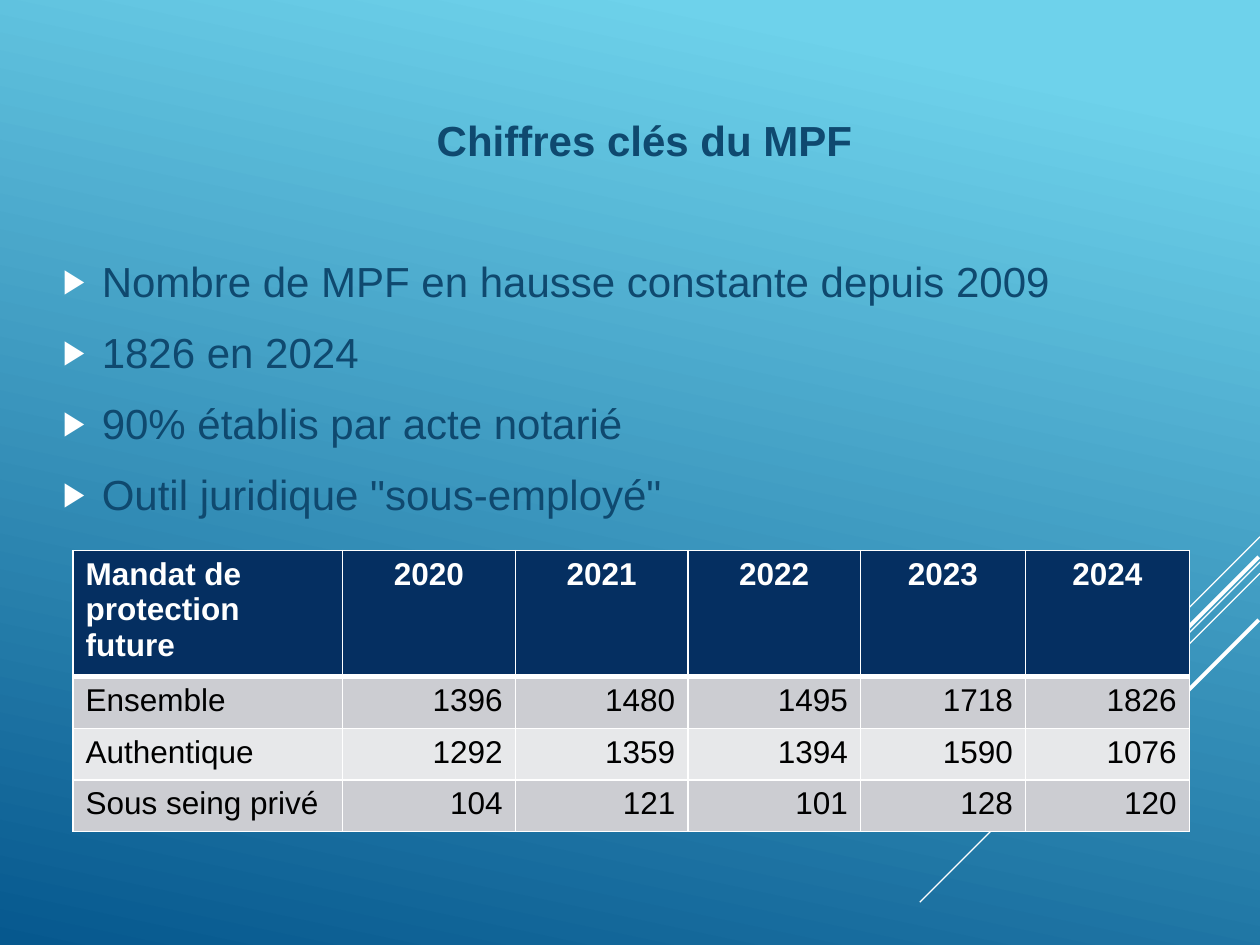
from dataclasses import dataclass

from lxml.etree import SubElement
from pptx import Presentation
from pptx.dml.color import RGBColor
from pptx.enum.shapes import MSO_CONNECTOR
from pptx.enum.text import MSO_ANCHOR, PP_ALIGN
from pptx.oxml import parse_xml
from pptx.oxml.ns import nsdecls, qn
from pptx.util import Inches, Pt

TITLE = "Chiffres clés du MPF"
KEY_POINTS = [
    "Nombre de MPF en hausse constante depuis 2009",
    "1826 en 2024",
    "90% établis par acte notarié",
    'Outil juridique "sous-employé"',
]
MANDATES = [
    ("Mandat de protection future", "2020", "2021", "2022", "2023", "2024"),
    ("Ensemble", "1396", "1480", "1495", "1718", "1826"),
    ("Authentique", "1292", "1359", "1394", "1590", "1076"),
    ("Sous seing privé", "104", "121", "101", "128", "120"),
]
COLUMN_WIDTHS = [2.14, 1.37, 1.37, 1.37, 1.31, 1.3]
ROW_HEIGHTS = [0.94, 0.41, 0.41, 0.41]
DIAGONALS = [
    (10, 4.26, 0.83, 0.75),
    (10, 4.46, 2.7, 0.75),
    (10, 4.55, 1.72, 0.75),
    (9.99, 4.42, 1.57, 2.25),
    (9.99, 4.92, 1.14, 2.25),
]


@dataclass(frozen=True)
class Theme:
    font: str = "Arial"
    sky: str = "6ED2EB"
    deep: str = "06588E"
    ink: str = "0F496F"
    white: str = "FFFFFF"
    black: str = "000000"
    header: str = "052F61"
    bands: tuple = ("CCCDD2", "E7E8EA")
    body_size: int = 24
    table_size: int = 18
    grid: int = 1
    header_rule: int = 3


THEME = Theme()


def rgb(color):
    return RGBColor.from_string(color)


def style(paragraph, size, color, bold=False, align=PP_ALIGN.LEFT):
    paragraph.alignment = align
    for run in paragraph.runs:
        run.font.name = THEME.font
        run.font.size = Pt(size)
        run.font.bold = bold
        run.font.color.rgb = rgb(color)


def paint_background(slide):
    fill = slide.background.fill
    fill.gradient()
    fill.gradient_angle = 258
    stops = zip(fill.gradient_stops, (THEME.sky, THEME.deep), (0.1, 1))
    for stop, color, position in stops:
        stop.color.rgb = rgb(color)
        stop.position = position


def add_diagonals(slide):
    for x, y, span, weight in DIAGONALS:
        diagonal = slide.shapes.add_connector(
            MSO_CONNECTOR.STRAIGHT,
            Inches(x), Inches(y), Inches(x - span), Inches(y + span),
        )
        diagonal.line.color.rgb = rgb(THEME.white)
        diagonal.line.width = Pt(weight)
        SubElement(diagonal._element.spPr, qn("a:effectLst"))


def add_bullet(paragraph):
    properties = paragraph._p.get_or_add_pPr()
    properties.set("marL", str(Inches(0.31)))
    properties.set("indent", str(-Inches(0.31)))
    color = SubElement(properties, qn("a:buClr"))
    SubElement(color, qn("a:srgbClr"), val=THEME.white)
    SubElement(properties, qn("a:buSzPct"), val="80000")
    SubElement(properties, qn("a:buFont"), typeface=THEME.font)
    SubElement(properties, qn("a:buChar"), char="▶")


def add_body(slide):
    body = slide.shapes.add_textbox(
        Inches(0.4), Inches(0.58), Inches(9.43), Inches(4.12)
    ).text_frame
    body.word_wrap = True
    body.vertical_anchor = MSO_ANCHOR.TOP
    body.margin_top = Inches(0.33)
    body.text = "\n".join([TITLE, *KEY_POINTS])
    title, *points = body.paragraphs
    style(title, THEME.body_size, THEME.ink, True, PP_ALIGN.CENTER)
    title.space_after = Pt(46)
    for point in points:
        style(point, THEME.body_size, THEME.ink)
        point.space_before = Pt(5.8)
        point.space_after = Pt(6)
        add_bullet(point)


def add_borders(cell, top, bottom):
    weights = {"L": THEME.grid, "R": THEME.grid, "T": top, "B": bottom}
    properties = cell._tc.get_or_add_tcPr()
    for position, (side, weight) in enumerate(weights.items()):
        border = parse_xml(
            f'<a:ln{side} {nsdecls("a")} w="{Pt(weight)}"><a:solidFill>'
            f'<a:srgbClr val="{THEME.white}"/></a:solidFill></a:ln{side}>'
        )
        properties.insert(position, border)


def add_mandates(slide):
    table = slide.shapes.add_table(
        len(MANDATES), len(COLUMN_WIDTHS), Inches(0.58), Inches(4.37),
        Inches(sum(COLUMN_WIDTHS)), Inches(sum(ROW_HEIGHTS)),
    ).table
    table.horz_banding = False
    for column, width in zip(table.columns, COLUMN_WIDTHS):
        column.width = Inches(width)
    for r, (values, height) in enumerate(zip(MANDATES, ROW_HEIGHTS)):
        table.rows[r].height = Inches(height)
        is_header = r == 0
        fill = THEME.header if is_header else THEME.bands[(r - 1) % 2]
        ink = THEME.white if is_header else THEME.black
        number_align = PP_ALIGN.CENTER if is_header else PP_ALIGN.RIGHT
        top = THEME.header_rule if r == 1 else THEME.grid
        bottom = THEME.header_rule if is_header else THEME.grid
        for c, value in enumerate(values):
            cell = table.cell(r, c)
            cell.text_frame.text = value
            align = number_align if c else PP_ALIGN.LEFT
            style(cell.text_frame.paragraphs[0], THEME.table_size, ink, is_header, align)
            cell.fill.solid()
            cell.fill.fore_color.rgb = rgb(fill)
            add_borders(cell, top, bottom)


def main():
    """Build the slide of key figures on the mandat de protection future."""
    deck = Presentation()
    deck.slide_width, deck.slide_height = Inches(10), Inches(7.5)
    slide = deck.slides.add_slide(deck.slide_layouts[6])
    paint_background(slide)
    add_diagonals(slide)
    add_body(slide)
    add_mandates(slide)
    deck.save("out.pptx")


if __name__ == "__main__":
    main()
